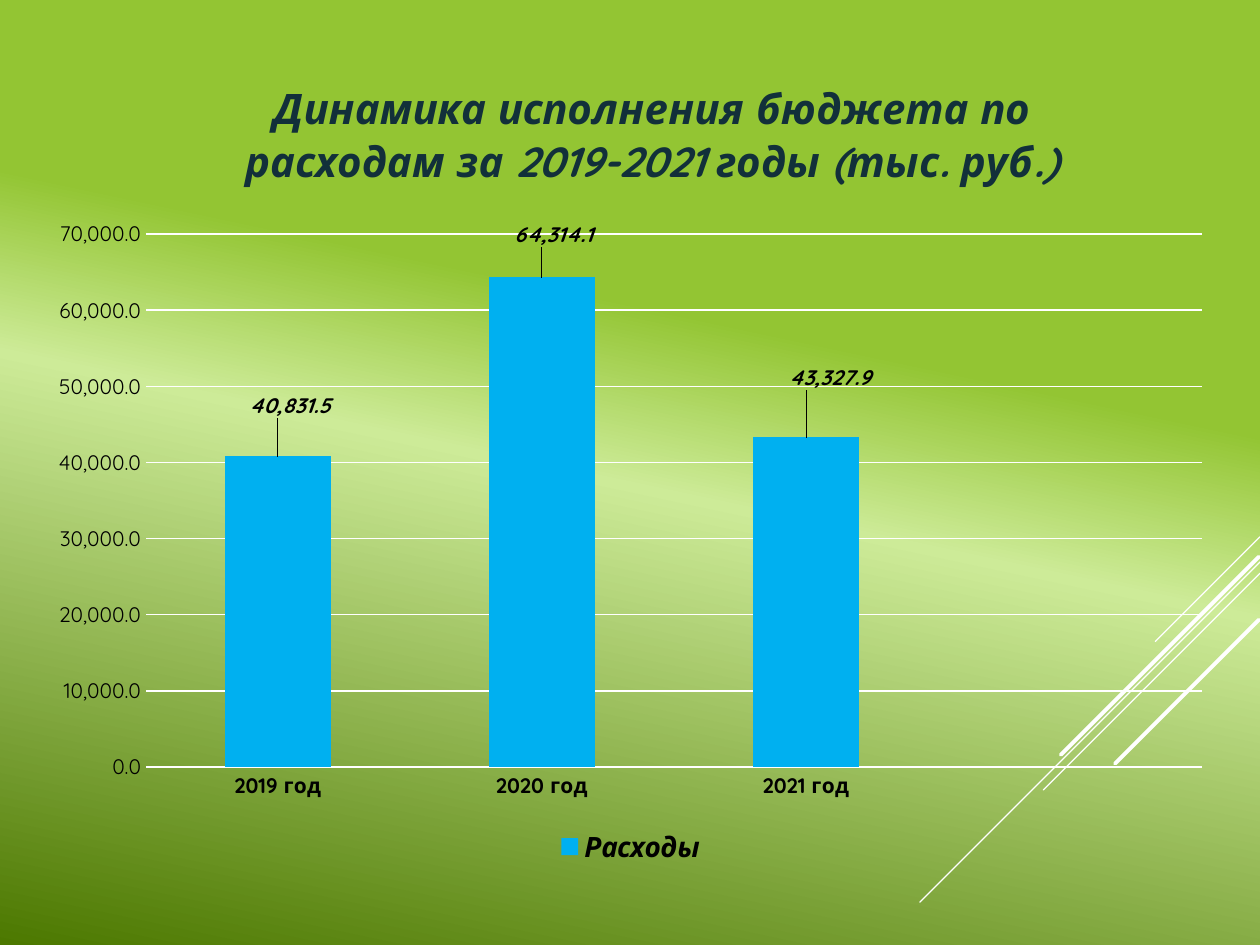
"""Build a slide with a column chart of budget spending for 2019-2021."""
from copy import deepcopy

from lxml.etree import SubElement
from pptx import Presentation
from pptx.chart.data import CategoryChartData
from pptx.dml.color import RGBColor
from pptx.enum.chart import XL_CHART_TYPE, XL_LABEL_POSITION, XL_LEGEND_POSITION, XL_TICK_MARK
from pptx.enum.shapes import MSO_CONNECTOR
from pptx.oxml import parse_xml
from pptx.oxml.ns import nsdecls, qn
from pptx.util import Inches, Pt

WHITE = RGBColor(0xFF, 0xFF, 0xFF)
BLACK = RGBColor(0, 0, 0)
BLUE = RGBColor(0x00, 0xB0, 0xF0)
NAVY = RGBColor(0x12, 0x30, 0x3A)
GREEN = RGBColor(0x93, 0xC5, 0x33)
PALE_GREEN = RGBColor(0xCD, 0xEB, 0x98)
DARK_GREEN = RGBColor(0x4C, 0x78, 0x00)
FONT = "Quicksand"
NUMBER_FORMAT = "#,##0.0"


def style(font, size, color=BLACK, bold=False, italic=False):
    font.name, font.size, font.bold, font.italic = FONT, Pt(size), bold, italic
    font.color.rgb = color


def manual_layout(**settings):
    items = "".join(f'<c:{key} val="{value}"/>' for key, value in settings.items())
    return parse_xml(
        f'<c:layout {nsdecls("c")}><c:manualLayout>{items}</c:manualLayout></c:layout>'
    )


presentation = Presentation()
presentation.slide_width, presentation.slide_height = Inches(10), Inches(7.5)
slide = presentation.slides.add_slide(presentation.slide_layouts[6])

backdrop = slide.background.fill
backdrop.gradient()
backdrop.gradient_angle = 360 - 102
stop_list = slide.element.find(".//" + qn("a:gsLst"))
stop_list.append(deepcopy(stop_list[-1]))
for stop, position, color in zip(
    backdrop.gradient_stops, (0.36, 0.51, 1), (GREEN, PALE_GREEN, DARK_GREEN)
):
    stop.position, stop.color.rgb = position, color

for right, top, run, weight in (
    (10, 4.26, 0.83, 0.75),
    (10, 4.46, 2.7, 0.75),
    (10, 4.55, 1.72, 0.75),
    (9.99, 4.42, 1.57, 2.25),
    (9.99, 4.92, 1.14, 2.25),
):
    ray = slide.shapes.add_connector(
        MSO_CONNECTOR.STRAIGHT,
        Inches(right), Inches(top), Inches(right - run), Inches(top + run),
    )
    ray.line.color.rgb, ray.line.width = WHITE, Pt(weight)
    ray.line._ln.set("cap", "rnd")
    SubElement(ray._element.spPr, qn("a:effectLst"))

spending = CategoryChartData(number_format=NUMBER_FORMAT)
spending.categories = ["2019 год", "2020 год", "2021 год", ""]
spending.add_series("Расходы", (40831.5, 64314.1, 43327.9, None))
chart = slide.shapes.add_chart(
    XL_CHART_TYPE.COLUMN_CLUSTERED,
    Inches(0.28), Inches(0.36), Inches(9.45), Inches(6.54), spending,
).chart
style(chart.font, 10, WHITE)

heading = chart.chart_title.text_frame
heading.text = "Динамика исполнения бюджета по расходам за 2019-2021 годы (тыс. руб.)"
style(heading.paragraphs[0].font, 24, NAVY, bold=True, italic=True)
chart.chart_title.include_in_layout = False
heading_xml = chart.chart_title._element
for old_layout in heading_xml.findall(qn("c:layout")):
    heading_xml.remove(old_layout)
heading_xml.find(qn("c:tx")).addnext(
    manual_layout(xMode="edge", yMode="edge", x=0.17, y=0.03)
)

chart.has_legend = True
chart.legend.position = XL_LEGEND_POSITION.BOTTOM
chart.legend.include_in_layout = False
style(chart.legend.font, 16, bold=True, italic=True)

years, amounts = chart.category_axis, chart.value_axis
for axis in (years, amounts):
    axis.major_tick_mark = axis.minor_tick_mark = XL_TICK_MARK.NONE
    axis.format.line.fill.background()
style(years.tick_labels.font, 12, bold=True)
style(amounts.tick_labels.font, 12)
amounts.tick_labels.number_format = NUMBER_FORMAT
amounts.tick_labels.number_format_is_linked = False
amounts.minimum_scale, amounts.maximum_scale, amounts.major_unit = 0, 70000, 10000
amounts.major_gridlines.format.line.color.rgb = WHITE
amounts.major_gridlines.format.line.width = Pt(0.75)

plot = chart.plots[0]
plot.gap_width = 150
plot.vary_by_categories = False
plot_area = chart._chartSpace.chart.plotArea
for old_layout in plot_area.findall(qn("c:layout")):
    plot_area.remove(old_layout)
plot_area.insert(0, manual_layout(
    layoutTarget="inner", xMode="edge", yMode="edge", x=0.093, y=0.229, w=0.887, h=0.647
))

columns = plot.series[0]
columns.format.fill.solid()
columns.format.fill.fore_color.rgb = BLUE
values = columns.data_labels
values.show_value = True
values.number_format, values.number_format_is_linked = NUMBER_FORMAT, False
style(values.font, 12, bold=True, italic=True)
for index, (shift_x, shift_y) in enumerate(((0.01, -0.04), (0.01, -0.03), (0.02, -0.05))):
    label = columns.points[index].data_label
    style(label.font, 12, bold=True, italic=True)
    label.position = XL_LABEL_POSITION.OUTSIDE_END
    label_xml = values._element.findall(qn("c:dLbl"))[index]
    label_xml.find(qn("c:idx")).addnext(manual_layout(x=shift_x, y=shift_y))

presentation.save("out.pptx")
